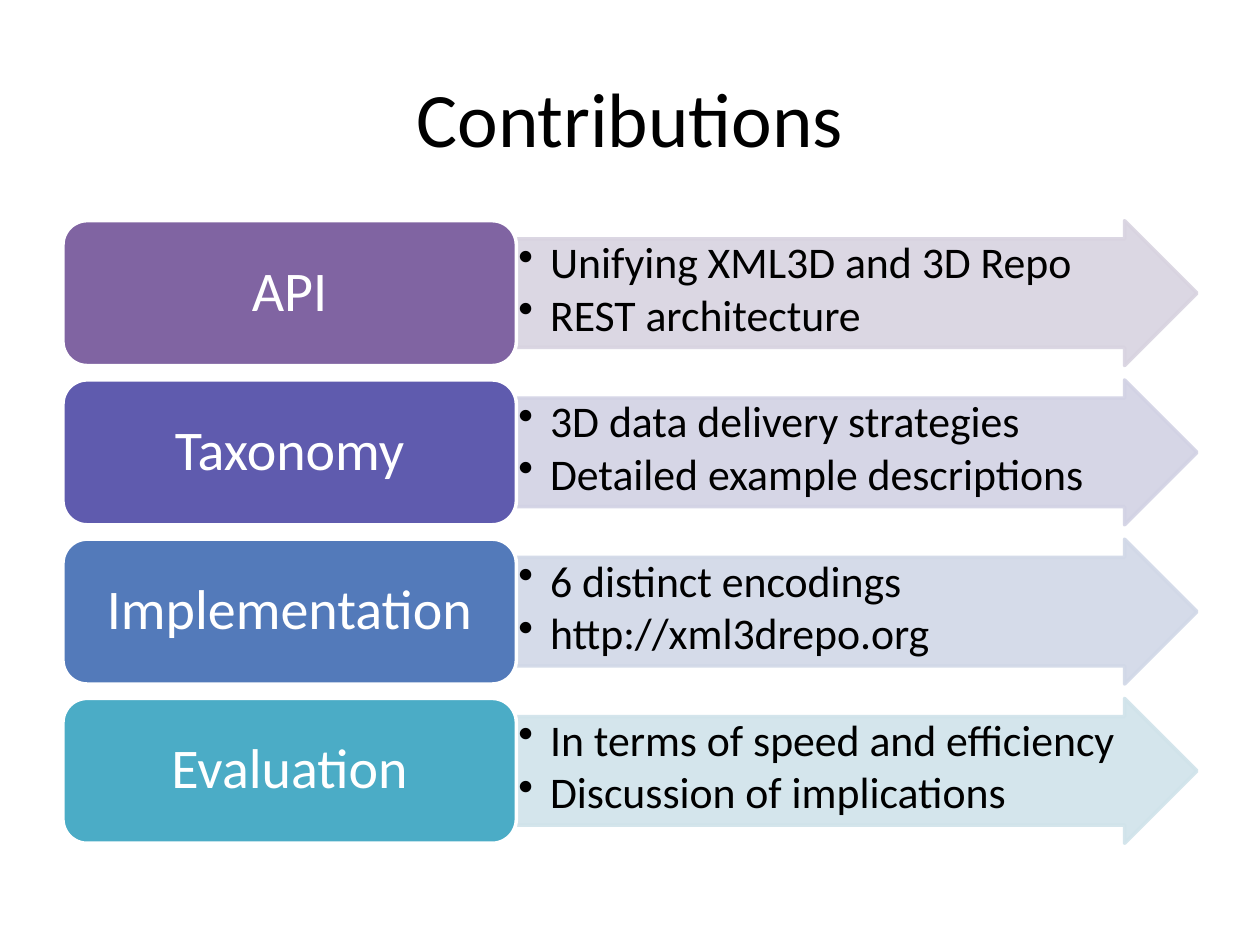
import lxml.etree
import pptx
import pptx.dml.color
import pptx.enum.shapes
import pptx.enum.text
import pptx.oxml.ns
import pptx.util

Cm = pptx.util.Cm
Pt = pptx.util.Pt
RGBColor = pptx.dml.color.RGBColor
MSO_SHAPE = pptx.enum.shapes.MSO_SHAPE
PP_ALIGN = pptx.enum.text.PP_ALIGN
MSO_ANCHOR = pptx.enum.text.MSO_ANCHOR
qn = pptx.oxml.ns.qn

HEADING = "Contributions"
CONTRIBUTIONS = [
    ("API", ["Unifying XML3D and 3D Repo", "REST architecture"],
     RGBColor(0x80, 0x64, 0xA2), RGBColor(0xD8, 0xD3, 0xE0)),
    ("Taxonomy", ["3D data delivery strategies", "Detailed example descriptions"],
     RGBColor(0x5F, 0x5B, 0xAE), RGBColor(0xD2, 0xD2, 0xE4)),
    ("Implementation", ["6 distinct encodings", "http://xml3drepo.org"],
     RGBColor(0x53, 0x7A, 0xBA), RGBColor(0xD1, 0xD8, 0xE7)),
    ("Evaluation", ["In terms of speed and efficiency", "Discussion of implications"],
     RGBColor(0x4B, 0xAC, 0xC6), RGBColor(0xD0, 0xE3, 0xEA)),
]
BLACK = RGBColor(0, 0, 0)
WHITE = RGBColor(0xFF, 0xFF, 0xFF)
FONT = "Calibri"

LEFT, TOP = Cm(1.27), Cm(4.45)
TOPIC_WIDTH, ARROW_WIDTH = Cm(9.14), Cm(13.72)
ROW_HEIGHT, ROW_PITCH = Cm(2.92), Cm(3.21)
HANGING = Cm(0.64)


def add_text(paragraph, text, size, color):
    run = paragraph.add_run()
    run.text = text
    run.font.name = FONT
    run.font.size = Pt(size)
    run.font.color.rgb = color


def add_panel(slide, preset, left, top, width, fill, line, anchor, margins):
    panel = slide.shapes.add_shape(preset, left, top, width, ROW_HEIGHT)
    panel.shadow.inherit = False
    panel.fill.solid()
    panel.fill.fore_color.rgb = fill
    panel.line.color.rgb = line
    panel.line.width = Pt(2)
    frame = panel.text_frame
    frame.word_wrap = True
    frame.vertical_anchor = anchor
    frame.margin_left = frame.margin_right = margins[0]
    frame.margin_top = frame.margin_bottom = margins[1]
    return panel


def add_arrow(slide, top, points, tint):
    arrow = add_panel(slide, MSO_SHAPE.RIGHT_ARROW, LEFT + TOPIC_WIDTH, top, ARROW_WIDTH,
                      tint, tint, MSO_ANCHOR.TOP, (Cm(0.04), Cm(0.04)))
    arrow.adjustments[0] = 0.75
    arrow.adjustments[1] = 0.5
    for color in arrow._element.spPr.iter(qn("a:srgbClr")):
        lxml.etree.SubElement(color, qn("a:alpha"), val="90000")
    frame = arrow.text_frame
    for index, point in enumerate(points):
        paragraph = frame.add_paragraph() if index else frame.paragraphs[0]
        properties = paragraph._p.get_or_add_pPr()
        properties.set("marL", str(HANGING))
        properties.set("indent", str(-HANGING))
        lxml.etree.SubElement(properties, qn("a:buChar"), char="•")
        paragraph.level = 1
        paragraph.alignment = PP_ALIGN.LEFT
        paragraph.line_spacing = 0.9
        paragraph.space_after = Pt(3)
        add_text(paragraph, point, 25, BLACK)


def add_topic(slide, top, topic, color):
    box = add_panel(slide, MSO_SHAPE.ROUNDED_RECTANGLE, LEFT, top, TOPIC_WIDTH,
                    color, WHITE, MSO_ANCHOR.MIDDLE, (Cm(0.33), Cm(0.18)))
    paragraph = box.text_frame.paragraphs[0]
    paragraph.alignment = PP_ALIGN.CENTER
    paragraph.line_spacing = 0.9
    add_text(paragraph, topic, 32, WHITE)


def main():
    deck = pptx.Presentation()
    deck.slide_width, deck.slide_height = Cm(25.4), Cm(19.05)
    slide = deck.slides.add_slide(deck.slide_layouts[5])

    heading = slide.shapes.title
    heading.left, heading.top = LEFT, Cm(0.76)
    heading.width, heading.height = TOPIC_WIDTH + ARROW_WIDTH, Cm(3.18)
    heading.text_frame.vertical_anchor = MSO_ANCHOR.MIDDLE
    heading_line = heading.text_frame.paragraphs[0]
    heading_line.alignment = PP_ALIGN.CENTER
    add_text(heading_line, HEADING, 44, BLACK)

    for row, (topic, points, color, tint) in enumerate(CONTRIBUTIONS):
        top = TOP + row * ROW_PITCH
        add_arrow(slide, top, points, tint)
        add_topic(slide, top, topic, color)

    deck.save("out.pptx")


if __name__ == "__main__":
    main()
